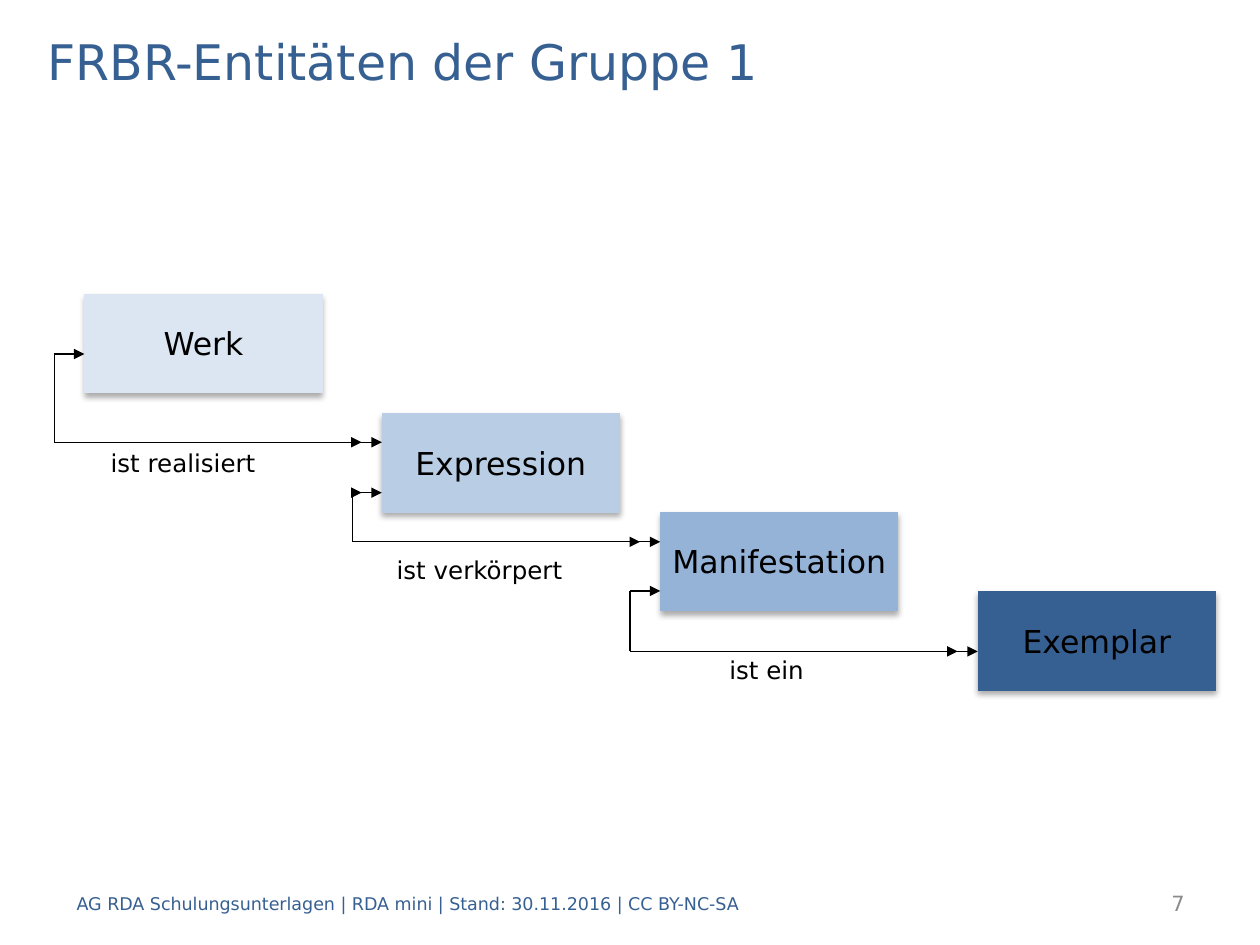
from typing import NamedTuple

from lxml import etree
from pptx import Presentation
from pptx.dml.color import RGBColor
from pptx.enum.shapes import MSO_CONNECTOR, MSO_SHAPE
from pptx.enum.text import MSO_ANCHOR, PP_ALIGN
from pptx.oxml import parse_xml
from pptx.oxml.ns import nsdecls, qn
from pptx.util import Inches, Pt

PROCESS = MSO_SHAPE.FLOWCHART_PROCESS
STRAIGHT = MSO_CONNECTOR.STRAIGHT
MIDDLE, TOP = MSO_ANCHOR.MIDDLE, MSO_ANCHOR.TOP
LEFT, CENTER, RIGHT = PP_ALIGN.LEFT, PP_ALIGN.CENTER, PP_ALIGN.RIGHT

FONT = "DejaVu Sans"
BLACK = RGBColor(0x00, 0x00, 0x00)
GREY = RGBColor(0x8C, 0x8C, 0x8C)
NAVY = RGBColor(0x37, 0x60, 0x92)
BLUE = RGBColor(0x95, 0xB3, 0xD7)
SKY = RGBColor(0xB9, 0xCD, 0xE5)
PALE = RGBColor(0xDC, 0xE6, 0xF2)

BOX_W, BOX_H = 1.89, 0.79
SHADOW = (
    f'<a:effectLst {nsdecls("a")}>'
    f'<a:outerShdw blurRad="{Pt(3.5)}" dist="{Pt(2.2)}" dir="5400000" rotWithShape="0">'
    '<a:srgbClr val="000000"><a:alpha val="32000"/></a:srgbClr>'
    "</a:outerShdw></a:effectLst>"
)


class Box(NamedTuple):
    text: str
    x: float
    y: float
    fill: RGBColor


class Link(NamedTuple):
    """A bracket from the rail at x to a source box (top) and a target box (low)."""
    x: float
    top: float
    low: float
    source: float
    target: float
    inner: tuple[tuple[float, float, float], ...]  # extra arrows: from x, to x, y


class Label(NamedTuple):
    text: str
    x: float
    y: float
    w: float
    h: float
    size: float
    color: RGBColor = BLACK
    align: PP_ALIGN = LEFT
    anchor: MSO_ANCHOR = MIDDLE
    wrap: bool = True


BOXES = (
    Box("Werk", 0.67, 2.33, PALE),
    Box("Expression", 3.03, 3.28, SKY),
    Box("Manifestation", 5.24, 4.06, BLUE),
    Box("Exemplar", 7.76, 4.69, NAVY),
)
LINKS = (
    Link(0.43, 2.81, 3.51, 0.67, 3.03, ((0.43, 2.87, 3.51),)),
    Link(2.8, 3.91, 4.3, 3.03, 5.24, ((2.8, 2.87, 3.91), (2.8, 5.08, 4.3))),
    Link(5, 4.69, 5.17, 5.24, 7.76, ((5.31, 7.6, 5.17),)),
)
LABELS = (
    Label("FRBR-Entitäten der Gruppe 1", 0.28, 0.2, 9.45, 0.56, 28, NAVY),
    Label("ist realisiert", 0.78, 3.51, 1.35, 0.33, 14, anchor=TOP, wrap=False),
    Label("ist verkörpert", 3.05, 4.36, 1.53, 0.33, 14, anchor=TOP, wrap=False),
    Label("ist ein", 5.69, 5.15, 0.79, 0.33, 14, anchor=TOP, wrap=False),
    Label("7", 7.91, 6.97, 1.59, 0.4, 12, GREY, RIGHT),
    Label("AG RDA Schulungsunterlagen | RDA mini | Stand: 30.11.2016 | CC BY-NC-SA",
          0.51, 6.97, 8.5, 0.4, 10, NAVY),
)


def write(shape, text: str, size: float, color: RGBColor, align: PP_ALIGN,
          anchor: MSO_ANCHOR, wrap: bool) -> None:
    frame = shape.text_frame
    frame.word_wrap = wrap
    frame.vertical_anchor = anchor
    par = frame.paragraphs[0]
    par.text = text
    par.alignment = align
    par.font.name = FONT
    par.font.size = Pt(size)
    par.font.color.rgb = color


def draw_box(shapes, box: Box) -> None:
    shape = shapes.add_shape(PROCESS, Inches(box.x), Inches(box.y),
                             Inches(BOX_W), Inches(BOX_H))
    shape.fill.solid()
    shape.fill.fore_color.rgb = box.fill
    shape.line.fill.background()
    shape._element.spPr.append(parse_xml(SHADOW))
    write(shape, box.text, 18, BLACK, CENTER, MIDDLE, False)


def draw_line(shapes, x1: float, y1: float, x2: float, y2: float,
              arrow: bool = True) -> None:
    line = shapes.add_connector(STRAIGHT, Inches(x1), Inches(y1),
                                Inches(x2), Inches(y2))
    line.line.color.rgb = BLACK
    line.line.width = Pt(0.75)
    if arrow:
        etree.SubElement(line.line._get_or_add_ln(), qn("a:tailEnd"), type="triangle")
    etree.SubElement(line._element.spPr, qn("a:effectLst"))


def draw_link(shapes, link: Link) -> None:
    draw_line(shapes, link.x, link.low, link.target, link.low)
    draw_line(shapes, link.x, link.top, link.x, link.low, arrow=False)
    draw_line(shapes, link.x, link.top, link.source, link.top)
    for start, end, y in link.inner:
        draw_line(shapes, start, y, end, y)


def draw_label(shapes, label: Label) -> None:
    shape = shapes.add_textbox(Inches(label.x), Inches(label.y),
                               Inches(label.w), Inches(label.h))
    write(shape, label.text, label.size, label.color, label.align,
          label.anchor, label.wrap)


def main() -> None:
    deck = Presentation()
    deck.slide_width, deck.slide_height = Inches(10), Inches(7.5)
    shapes = deck.slides.add_slide(deck.slide_layouts[6]).shapes
    for box in BOXES:
        draw_box(shapes, box)
    for link in LINKS:
        draw_link(shapes, link)
    for label in LABELS:
        draw_label(shapes, label)
    deck.save("out.pptx")


if __name__ == "__main__":
    main()
